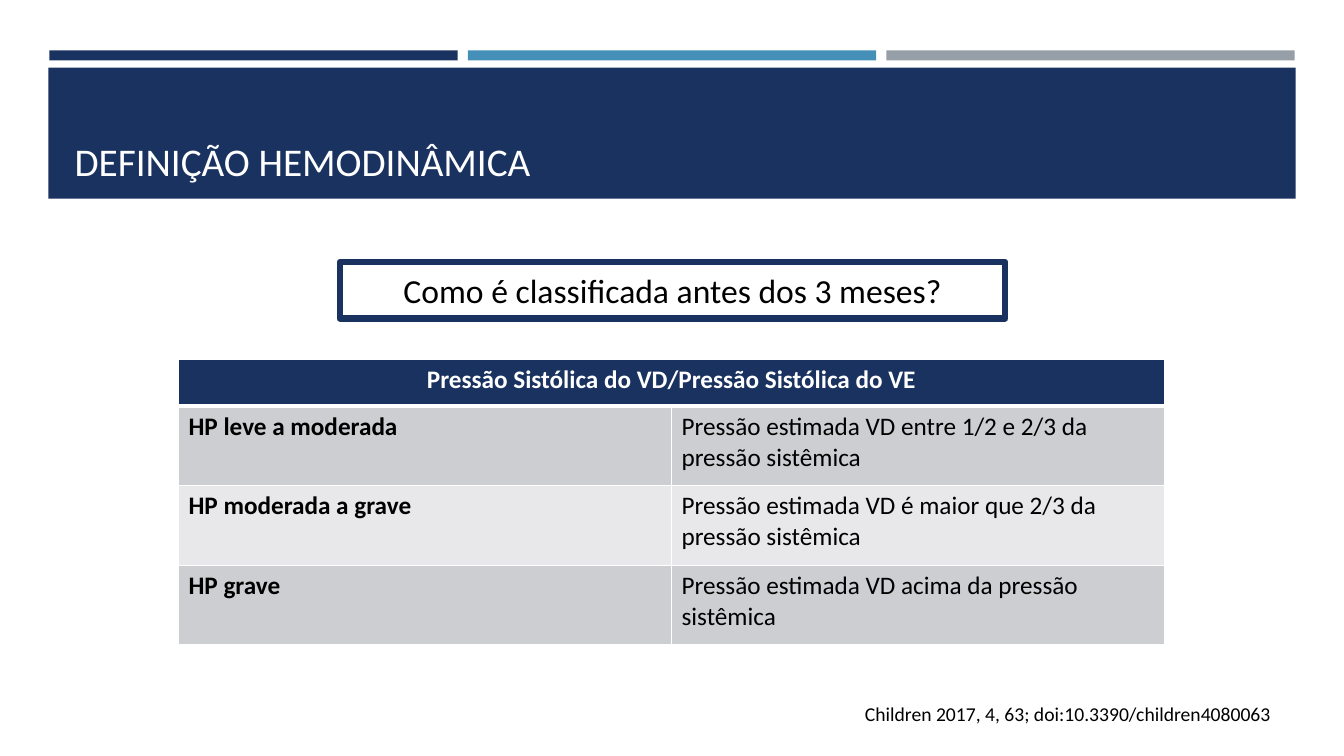
from dataclasses import dataclass

from lxml.etree import SubElement
from pptx import Presentation
from pptx.dml.color import RGBColor
from pptx.enum.shapes import MSO_SHAPE
from pptx.enum.text import MSO_ANCHOR, MSO_AUTO_SIZE, PP_ALIGN
from pptx.oxml.ns import qn
from pptx.util import Pt

SCALE = 9144  # EMU in one px, 100 px to the inch


@dataclass(frozen=True)
class Theme:
    font: str = "Calibri"
    navy: str = "1A3260"
    blue: str = "4590B8"
    gray: str = "969FA7"
    white: str = "FFFFFF"
    black: str = "000000"
    bands: tuple = ("CDCED2", "E8E8EA")
    title: int = 28
    lead: int = 24
    cell: int = 18
    cite: int = 14


THEME = Theme()

HEAD = "Pressão Sistólica do VD/Pressão Sistólica do VE"
GRADES = [
    ("HP leve a moderada",
     "Pressão estimada VD entre 1/2 e 2/3 da pressão sistêmica"),
    ("HP moderada a grave",
     "Pressão estimada VD é maior que 2/3 da pressão sistêmica"),
    ("HP grave",
     "Pressão estimada VD acima da pressão sistêmica"),
]


def px(*sizes):
    return [size * SCALE for size in sizes]


def paint(fill, color):
    fill.solid()
    fill.fore_color.rgb = RGBColor.from_string(color)


def place(shape, *box):
    shape.left, shape.top, shape.width, shape.height = px(*box)


def write(frame, text, size, color=THEME.black, bold=False,
          align=PP_ALIGN.LEFT):
    para = frame.paragraphs[0]
    para.alignment = align
    run = para.add_run()
    run.text = text
    run.font.name = THEME.font
    run.font.size = Pt(size)
    run.font.bold = bold
    run.font.color.rgb = RGBColor.from_string(color)
    return para


def add_bar(slide, box, color):
    bar = slide.shapes.add_shape(MSO_SHAPE.RECTANGLE, *px(*box))
    bar.shadow.inherit = False
    paint(bar.fill, color)
    bar.line.fill.background()


def add_title(slide, text):
    title = slide.shapes.title
    place(title, 64, 77, 1206, 111)
    # Bring the title in front of its band
    title.element.getparent().append(title.element)
    frame = title.text_frame
    frame.auto_size = MSO_AUTO_SIZE.NONE
    frame.vertical_anchor = MSO_ANCHOR.BOTTOM
    write(frame, text, THEME.title, THEME.white)


def add_lead(slide, text):
    lead = slide.placeholders[1]
    place(lead, 337, 260, 660, 56)
    paint(lead.fill, THEME.white)
    paint(lead.line.fill, THEME.navy)
    lead.line.width = Pt(4.5)
    frame = lead.text_frame
    frame.auto_size = MSO_AUTO_SIZE.NONE
    frame.vertical_anchor = MSO_ANCHOR.MIDDLE
    para = write(frame, text, THEME.lead, align=PP_ALIGN.CENTER)
    para.space_before = Pt(0)
    # Plain paragraph: no bullet, no indent
    props = para._p.get_or_add_pPr()
    props.set("marL", "0")
    props.set("indent", "0")
    SubElement(props, qn("a:buNone"))


def add_edges(cell, base):
    props = cell._tc.get_or_add_tcPr()
    for side, width in zip("LRTB", (1, 1, 1, base)):
        line = SubElement(props, qn(f"a:ln{side}"), w=str(Pt(width)))
        fill = SubElement(line, qn("a:solidFill"))
        SubElement(fill, qn("a:srgbClr"), val=THEME.white)


def add_grid(slide, head, rows):
    box = px(177, 357, 978, 283)
    grid = slide.shapes.add_table(len(rows) + 1, 2, *box).table
    for index, row in enumerate(grid.rows):
        row.height = px(79 if index else 46)[0]
        color = THEME.bands[(index - 1) % 2] if index else THEME.navy
        for cell in row.cells:
            add_edges(cell, 1 if index else 3)
            paint(cell.fill, color)

    # Header across both columns
    grid.cell(0, 0).merge(grid.cell(0, 1))
    write(grid.cell(0, 0).text_frame, head, THEME.cell, THEME.white,
          True, PP_ALIGN.CENTER)

    for index, pair in enumerate(rows, 1):
        for col, text in enumerate(pair):
            write(grid.cell(index, col).text_frame, text, THEME.cell,
                  bold=col == 0)


def add_cite(slide, text):
    box = slide.shapes.add_textbox(*px(848, 691, 436, 34))
    box.text_frame.word_wrap = True
    write(box.text_frame, text, THEME.cite)


def main():
    deck = Presentation()
    deck.slide_width, deck.slide_height = px(1333, 750)
    slide = deck.slides.add_slide(deck.slide_layouts[1])

    # Top stripes and title band
    for index, color in enumerate((THEME.navy, THEME.blue, THEME.gray)):
        add_bar(slide, (49 + 415 * index, 50, 405, 10), color)
    add_bar(slide, (48, 67, 1237, 130), THEME.navy)
    add_title(slide, "DEFINIÇÃO HEMODINÂMICA")

    # Question, grades and source
    add_lead(slide, "Como é classificada antes dos 3 meses?")
    add_grid(slide, HEAD, GRADES)
    add_cite(slide, "Children 2017, 4, 63; doi:10.3390/children4080063")

    deck.save("out.pptx")


if __name__ == "__main__":
    main()
